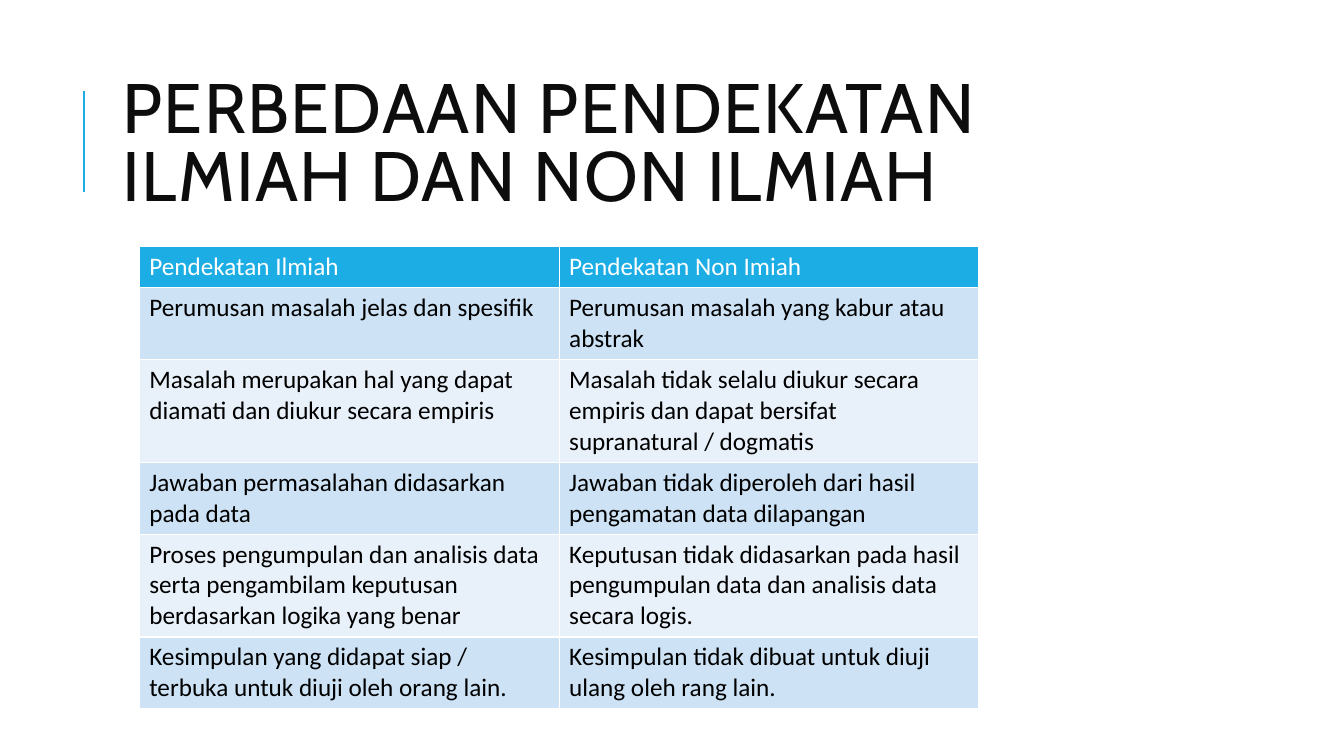
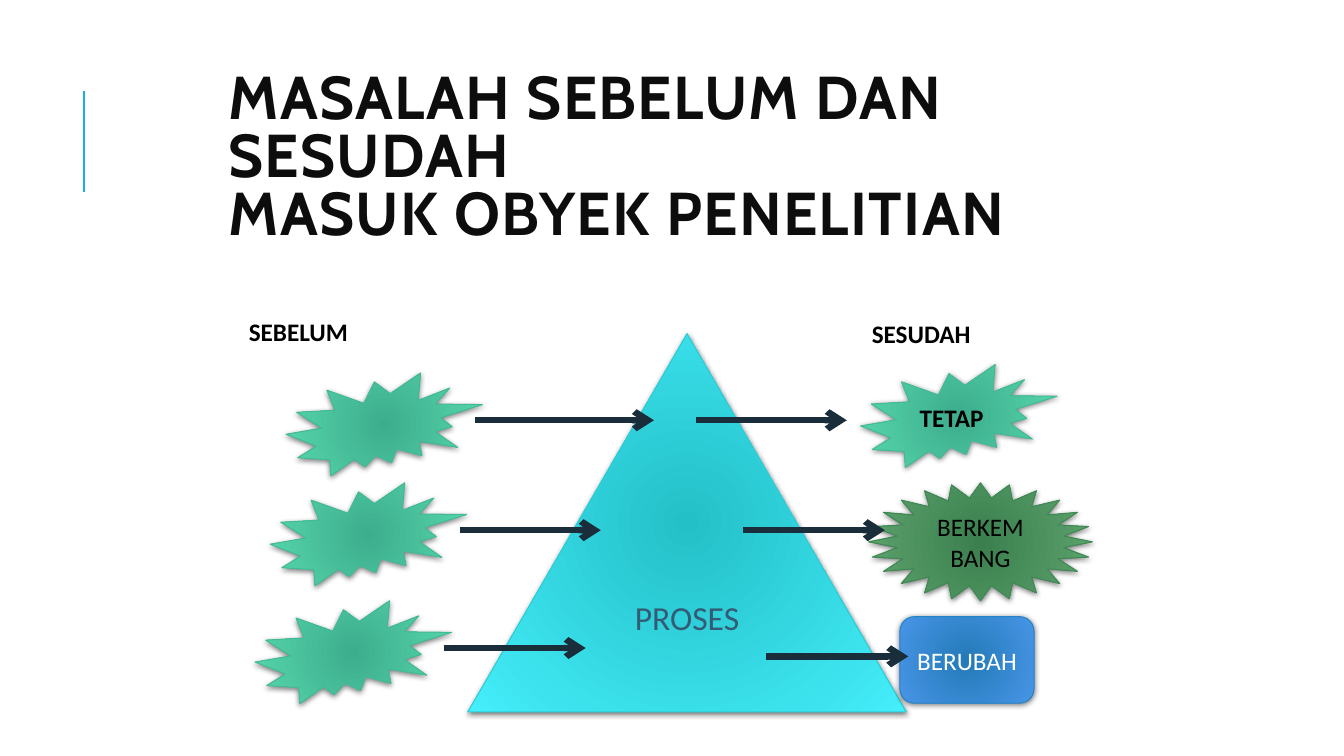
from dataclasses import dataclass

from lxml.etree import SubElement
from pptx import Presentation
from pptx.dml.color import RGBColor
from pptx.enum.shapes import MSO_CONNECTOR, MSO_SHAPE
from pptx.enum.text import MSO_ANCHOR, PP_ALIGN
from pptx.oxml.ns import qn
from pptx.presentation import Presentation as PresentationType
from pptx.shapes.connector import Connector
from pptx.slide import Slide
from pptx.text.text import TextFrame
from pptx.util import Cm, Pt

ACCENT = "1CADE4"
ARROW = "1A2D3A"
BLACK = "000000"
WHITE = "FFFFFF"
TITLE_COLOR = "0D0D0D"
BAND_COLORS = ("E8F1FA", "CDE3F5")
TITLE_FONT = "Cabin"
BODY_FONT = "Calibri"


@dataclass(frozen=True)
class Box:
    left: float
    top: float
    width: float
    height: float

    def lengths(self) -> tuple[Cm, Cm, Cm, Cm]:
        return Cm(self.left), Cm(self.top), Cm(self.width), Cm(self.height)


@dataclass(frozen=True)
class TextStyle:
    size: float = 18
    color: str = BLACK
    bold: bool = False
    font: str = BODY_FONT


@dataclass(frozen=True)
class Palette:
    center: str
    edge: str
    outline: str


@dataclass(frozen=True)
class Figure:
    kind: MSO_SHAPE
    box: Box
    palette: Palette
    text: str = ""
    style: TextStyle = TextStyle()


@dataclass(frozen=True)
class Arrow:
    start: float
    end: float
    top: float


@dataclass(frozen=True)
class Label:
    text: str
    box: Box


@dataclass(frozen=True)
class TableRow:
    lines: int
    scientific: str
    unscientific: str


TEAL = Palette("3DAD8D", "57D8AC", "42BA97")
CYAN = Palette("24C0C8", "44EEFA", "27CED7")
GREEN = Palette("3A7F4D", "5FA56F", "3E8853")
BLUE = Palette("237AB8", "4895E7", "2683C6")

ROWS = (
    TableRow(1, "Pendekatan Ilmiah", "Pendekatan Non Imiah"),
    TableRow(2, "Perumusan masalah jelas dan spesifik",
             "Perumusan masalah yang kabur atau abstrak"),
    TableRow(3, "Masalah merupakan hal yang dapat diamati dan diukur secara empiris",
             "Masalah tidak selalu diukur secara empiris dan dapat bersifat "
             "supranatural / dogmatis"),
    TableRow(2, "Jawaban permasalahan didasarkan pada data",
             "Jawaban tidak diperoleh dari hasil pengamatan data dilapangan"),
    TableRow(3, "Proses pengumpulan dan analisis data serta pengambilam keputusan "
             "berdasarkan logika yang benar",
             "Keputusan tidak didasarkan pada hasil pengumpulan data dan analisis "
             "data secara logis."),
    TableRow(2, "Kesimpulan yang didapat siap / terbuka untuk diuji oleh orang lain.",
             "Kesimpulan tidak dibuat untuk diuji ulang oleh rang lain."),
)


def seal(left: float, top: float, text: str = "") -> Figure:
    return Figure(MSO_SHAPE.EXPLOSION2, Box(left, top, 4.95, 2.59), TEAL, text,
                  TextStyle(bold=True))


FIGURES = (
    Figure(MSO_SHAPE.ISOSCELES_TRIANGLE, Box(11.79, 8.41, 11.05, 9.53), CYAN,
           "PROSES", TextStyle(24, "335B74")),
    seal(7.21, 9.4),
    seal(6.81, 12.17),
    seal(6.43, 15.14),
    seal(21.69, 9.19, "TETAP"),
    Figure(MSO_SHAPE.STAR_24_POINT, Box(21.89, 12.17, 5.64, 2.97), GREEN, "BERKEMBANG"),
    Figure(MSO_SHAPE.ROUNDED_RECTANGLE, Box(22.68, 15.54, 3.38, 2.18), BLUE,
           "BERUBAH", TextStyle(color=WHITE)),
)

ARROWS = (
    Arrow(11.96, 16.48, 10.59),
    Arrow(17.53, 21.34, 10.59),
    Arrow(11.58, 15.14, 13.36),
    Arrow(18.72, 22.3, 13.36),
    Arrow(11.18, 14.76, 16.33),
    Arrow(19.3, 22.89, 16.54),
)

LABELS = (
    Label("SEBELUM", Box(6.02, 7.85, 6.15, 1.02)),
    Label("SESUDAH", Box(21.72, 7.9, 5.28, 1.02)),
)


def color(value: str) -> RGBColor:
    return RGBColor.from_string(value)


def write_text(text_frame: TextFrame, text: str, style: TextStyle) -> None:
    text_frame.text = text
    text_frame.word_wrap = True
    for paragraph in text_frame.paragraphs:
        for run in paragraph.runs:
            run.font.name = style.font
            run.font.size = Pt(style.size)
            run.font.bold = style.bold
            run.font.color.rgb = color(style.color)


def add_text(slide: Slide, box: Box, text: str, style: TextStyle) -> TextFrame:
    text_frame = slide.shapes.add_textbox(*box.lengths()).text_frame
    write_text(text_frame, text, style)
    return text_frame


def add_line(slide: Slide, start: tuple[float, float], end: tuple[float, float],
             line_color: str, width: float) -> Connector:
    connector = slide.shapes.add_connector(
        MSO_CONNECTOR.STRAIGHT, *(Cm(value) for value in start + end))
    connector.line.color.rgb = color(line_color)
    connector.line.width = Pt(width)
    SubElement(connector.element.spPr, qn("a:effectLst"))
    return connector


def add_arrow(slide: Slide, arrow: Arrow) -> None:
    connector = add_line(slide, (arrow.start, arrow.top), (arrow.end, arrow.top), ARROW, 4.5)
    SubElement(connector.element.spPr.find(qn("a:ln")), qn("a:tailEnd"), {"type": "arrow"})


def add_figure(slide: Slide, figure: Figure) -> None:
    shape = slide.shapes.add_shape(figure.kind, *figure.box.lengths())
    shape.line.color.rgb = color(figure.palette.outline)
    shape.line.width = Pt(0.75)
    shape.fill.gradient()
    stop_colors = (figure.palette.center, figure.palette.edge)
    for stop, stop_color in zip(shape.fill.gradient_stops, stop_colors):
        stop.color.rgb = color(stop_color)
    properties = shape.element.spPr
    gradient = properties.find(qn("a:gradFill"))
    gradient.remove(gradient.find(qn("a:lin")))
    radial = SubElement(gradient, qn("a:path"), {"path": "circle"})
    SubElement(radial, qn("a:fillToRect"), dict.fromkeys("ltrb", "100000"))
    shape.shadow.inherit = False
    shadow = SubElement(
        properties.find(qn("a:effectLst")), qn("a:outerShdw"),
        {"blurRad": str(Pt(4)), "dist": str(Pt(1)), "dir": "5400000", "rotWithShape": "0"})
    shadow_color = SubElement(shadow, qn("a:srgbClr"), {"val": BLACK})
    SubElement(shadow_color, qn("a:alpha"), {"val": "50000"})
    if figure.text:
        write_text(shape.text_frame, figure.text, figure.style)
        shape.text_frame.vertical_anchor = MSO_ANCHOR.MIDDLE
        shape.text_frame.paragraphs[0].alignment = PP_ALIGN.CENTER


def add_titled_slide(presentation: PresentationType, title: str, box: Box,
                     size: float, bold: bool) -> Slide:
    slide = presentation.slides.add_slide(presentation.slide_layouts[6])
    add_line(slide, (2.11, 4.83), (2.11, 2.29), ACCENT, 1.5)
    text_frame = add_text(slide, box, title, TextStyle(size, TITLE_COLOR, bold, TITLE_FONT))
    text_frame.vertical_anchor = MSO_ANCHOR.MIDDLE
    paragraph = text_frame.paragraphs[0]
    paragraph.line_spacing = 0.8
    for run in paragraph.runs:
        run.font._element.set("spc", "100")
    return slide


def add_comparison_table(slide: Slide) -> None:
    heights = [0.25 + 0.78 * row.lines for row in ROWS]
    box = Box(3.51, 6.22, 21.16, sum(heights))
    table = slide.shapes.add_table(len(ROWS), 2, *box.lengths()).table
    for column in table.columns:
        column.width = Cm(box.width / 2)
    for index, (row, height) in enumerate(zip(ROWS, heights)):
        table.rows[index].height = Cm(height)
        is_header = index == 0
        fill_color = ACCENT if is_header else BAND_COLORS[index % 2]
        style = TextStyle(color=WHITE if is_header else BLACK)
        for cell, text in zip(table.rows[index].cells, (row.scientific, row.unscientific)):
            write_text(cell.text_frame, text, style)
            properties = cell._tc.get_or_add_tcPr()
            for side in "LRTB":
                border = SubElement(properties, qn(f"a:ln{side}"), {"w": str(Pt(1))})
                border_fill = SubElement(border, qn("a:solidFill"))
                SubElement(border_fill, qn("a:srgbClr"), {"val": WHITE})
            cell.fill.solid()
            cell.fill.fore_color.rgb = color(fill_color)


def main() -> None:
    presentation = Presentation()
    presentation.slide_width = Cm(33.87)
    presentation.slide_height = Cm(19.05)

    comparison = add_titled_slide(
        presentation, "PERBEDAAN PENDEKATAN ILMIAH DAN NON ILMIAH",
        Box(2.84, 1.63, 27, 4.17), 50, False)
    add_comparison_table(comparison)

    process = add_titled_slide(
        presentation, "MASALAH SEBELUM DAN SESUDAH\vMASUK OBYEK PENELITIAN",
        Box(5.51, 2.44, 21.17, 3.18), 43.2, True)
    for figure in FIGURES:
        add_figure(process, figure)
    for arrow in ARROWS:
        add_arrow(process, arrow)
    for label in LABELS:
        add_text(process, label.box, label.text, TextStyle(bold=True))

    presentation.save("out.pptx")


if __name__ == "__main__":
    main()
